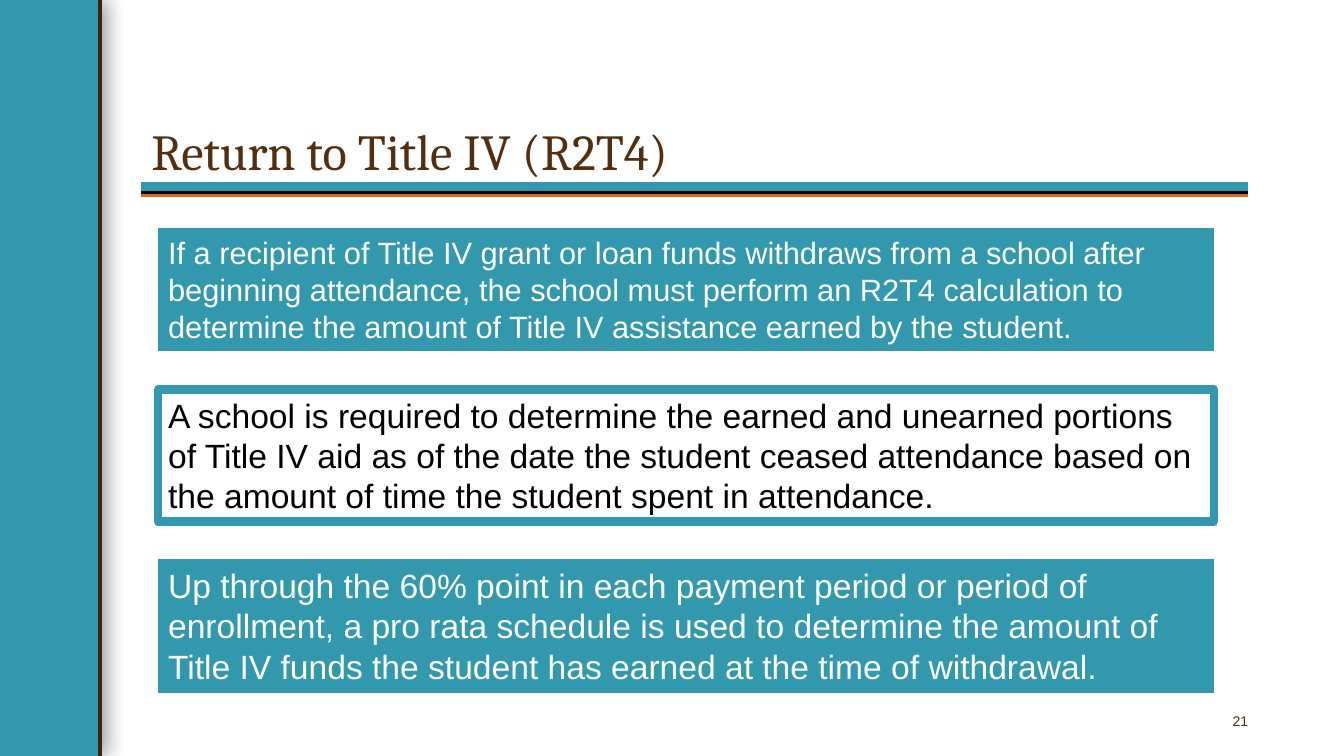
"""Build the Return to Title IV (R2T4) slide."""
from lxml import etree
from pptx import Presentation
from pptx.dml.color import RGBColor
from pptx.enum.shapes import MSO_CONNECTOR, MSO_SHAPE
from pptx.enum.text import MSO_ANCHOR, MSO_AUTO_SIZE, PP_ALIGN
from pptx.oxml import parse_xml
from pptx.oxml.ns import qn
from pptx.util import Pt

TEAL = RGBColor(0x32, 0x98, 0xAE)
BROWN = RGBColor(0x53, 0x2F, 0x11)
DARK_BROWN = RGBColor(0x3F, 0x24, 0x0D)
ORANGE = RGBColor(0xE0, 0x66, 0x1C)
BLACK = RGBColor(0, 0, 0)
WHITE = RGBColor(0xFF, 0xFF, 0xFF)
RECTANGLE = MSO_SHAPE.RECTANGLE
STRAIGHT = MSO_CONNECTOR.STRAIGHT
TOP, MIDDLE, BOTTOM = MSO_ANCHOR.TOP, MSO_ANCHOR.MIDDLE, MSO_ANCHOR.BOTTOM
LEFT, RIGHT = PP_ALIGN.LEFT, PP_ALIGN.RIGHT
NO_FIT, GROW = MSO_AUTO_SIZE.NONE, MSO_AUTO_SIZE.SHAPE_TO_FIT_TEXT

SHADOW = """<a:effectLst xmlns:a="http://schemas.openxmlformats.org/drawingml/2006/main">
<a:outerShdw blurRad="190500" dist="38100" dir="0" algn="l" rotWithShape="0">
<a:srgbClr val="000000"><a:alpha val="40000"/></a:srgbClr></a:outerShdw></a:effectLst>"""


def write(frame, text, size, color, font="Arial", align=LEFT, anchor=TOP,
          fit=NO_FIT, spacing=1.0):
    frame.word_wrap = True
    frame.auto_size = fit
    frame.vertical_anchor = anchor
    paragraph = frame.paragraphs[0]
    paragraph.alignment = align
    paragraph.line_spacing = spacing
    run = paragraph.add_run()
    run.text = text
    run.font.size = Pt(size)
    run.font.name = font
    run.font.color.rgb = color


presentation = Presentation()
presentation.slide_width = Pt(960)
presentation.slide_height = Pt(540)
slide = presentation.slides.add_slide(presentation.slide_layouts[5])
shapes = slide.shapes

sidebar = shapes.add_shape(RECTANGLE, Pt(0), Pt(0), Pt(72.5), Pt(540))
sidebar.fill.solid()
sidebar.fill.fore_color.rgb = TEAL
sidebar.line.fill.background()
sidebar._element.spPr.append(parse_xml(SHADOW))

page_number = shapes.add_textbox(Pt(675.5), Pt(500.5), Pt(216), Pt(28.8))
page_number.text_frame.margin_right = Pt(0)
write(page_number.text_frame, "21", 10, BROWN, align=RIGHT, anchor=MIDDLE)

rules = [
    (71.5, 540, 71.5, -3, DARK_BROWN, 3),
    (101, 139.5, 891.5, 139.5, ORANGE, 2.75),
    (101, 137.5, 891.5, 137.5, BLACK, 2.75),
    (101, 133.2, 891.5, 133.2, TEAL, 7),
]
for x1, y1, x2, y2, color, width in rules:
    rule = shapes.add_connector(STRAIGHT, Pt(x1), Pt(y1), Pt(x2), Pt(y2))
    rule.line.color.rgb = color
    rule.line.width = Pt(width)
    etree.SubElement(rule._element.spPr, qn("a:effectLst"))

title = shapes.title
title.left, title.top, title.width, title.height = Pt(101), Pt(28.8), Pt(791), Pt(104.4)
write(title.text_frame, "Return to Title IV (R2T4)", 36, BROWN, font="Cambria",
      anchor=BOTTOM, spacing=0.9)

statements = [
    (163.2, 87.25, 22, True,
     "If a recipient of Title IV grant or loan funds withdraws from a school after "
     "beginning attendance, the school must perform an R2T4 calculation to determine "
     "the amount of Title IV assistance earned by the student."),
    (278.2, 94.5, 24, False,
     "A school is required to determine the earned and unearned portions of Title IV "
     "aid as of the date the student ceased attendance based on the amount of time "
     "the student spent in attendance."),
    (400, 94.5, 24, True,
     "Up through the 60% point in each payment period or period of enrollment, a pro "
     "rata schedule is used to determine the amount of Title IV funds the student has "
     "earned at the time of withdrawal."),
]
for top, height, size, filled, text in statements:
    statement = shapes.add_shape(RECTANGLE, Pt(113), Pt(top), Pt(754), Pt(height))
    statement.shadow.inherit = False
    statement.line.color.rgb = TEAL
    statement.line.width = Pt(0.75 if filled else 6)
    etree.SubElement(statement.line._get_or_add_ln(), qn("a:round"))
    if filled:
        statement.fill.solid()
        statement.fill.fore_color.rgb = TEAL
    else:
        statement.fill.background()
    write(statement.text_frame, text, size, WHITE if filled else BLACK, fit=GROW)

presentation.save("out.pptx")
